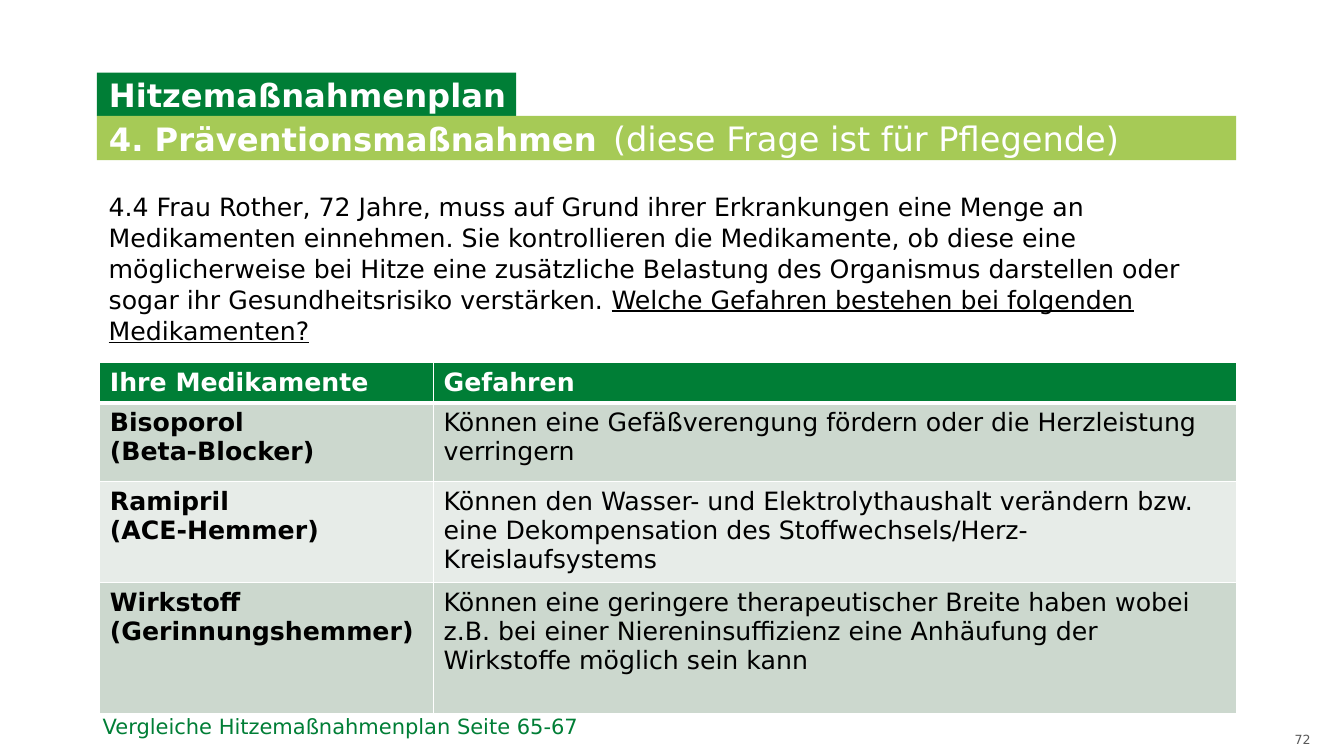
from lxml.etree import SubElement
from pptx import Presentation
from pptx.dml.color import RGBColor
from pptx.enum.text import MSO_ANCHOR, MSO_AUTO_SIZE, PP_ALIGN
from pptx.oxml.ns import qn
from pptx.util import Inches, Pt

GREEN = RGBColor(0x00, 0x7E, 0x36)
LIME = RGBColor(0xA6, 0xCA, 0x56)
BAND_DARK = RGBColor(0xCC, 0xD8, 0xCE)
BAND_LIGHT = RGBColor(0xE7, 0xEC, 0xE8)
WHITE = RGBColor(0xFF, 0xFF, 0xFF)
BLACK = RGBColor(0x00, 0x00, 0x00)
GREY = RGBColor(0x59, 0x59, 0x59)


class SlideBuilder:
    font = "DejaVu Sans"

    def __init__(self, slide):
        self.s = slide

    def run(self, p, text, size, color, bold=False, underline=False):
        r = p.add_run()
        r.text = text
        r.font.name = self.font
        r.font.size = Pt(size)
        r.font.bold = bold
        r.font.underline = underline
        r.font.color.rgb = color

    def place(self, sp, box):
        sp.left, sp.top, sp.width, sp.height = (Inches(v) for v in box)

    def bar(self, idx, box, fill, tab=None):
        sp = self.s.placeholders[idx]
        self.place(sp, box)
        sp.fill.solid()
        sp.fill.fore_color.rgb = fill
        tf = sp.text_frame
        tf.word_wrap = False
        tf.auto_size = MSO_AUTO_SIZE.NONE
        tf.vertical_anchor = MSO_ANCHOR.MIDDLE
        tf.margin_left, tf.margin_right = Inches(0.12), Inches(0.08)
        tf.margin_top = tf.margin_bottom = Inches(0.02)
        p = tf.paragraphs[0]
        p.alignment = PP_ALIGN.LEFT
        p.space_before = Pt(0)
        pPr = p._p.get_or_add_pPr()
        pPr.set("marL", "0")
        pPr.set("indent", "0")
        SubElement(pPr, qn("a:buNone"))
        if tab:
            tabs = SubElement(pPr, qn("a:tabLst"))
            SubElement(tabs, qn("a:tab"), pos=str(Inches(tab)), algn="l")
        return p

    def text(self, box, wrap=True, margins=True):
        tf = self.s.shapes.add_textbox(*(Inches(v) for v in box)).text_frame
        tf.word_wrap = wrap
        if not margins:
            tf.margin_left = tf.margin_right = 0
            tf.margin_top = tf.margin_bottom = 0
        return tf

    def cell(self, cell, lines, fill, color, bold, top, bottom):
        tcPr = cell._tc.get_or_add_tcPr()
        for side, width in (("L", 1), ("R", 1), ("T", top), ("B", bottom)):
            ln = SubElement(tcPr, qn(f"a:ln{side}"), w=str(Pt(width)))
            paint = SubElement(ln, qn("a:solidFill"))
            SubElement(paint, qn("a:srgbClr"), val=str(WHITE))
        cell.fill.solid()
        cell.fill.fore_color.rgb = fill
        tf = cell.text_frame
        for i, line in enumerate(lines):
            p = tf.add_paragraph() if i else tf.paragraphs[0]
            self.run(p, line, 18, color, bold)

    def table(self, box, widths, heights, rows):
        frame = self.s.shapes.add_table(len(rows), len(widths), *(Inches(v) for v in box))
        table = frame.table
        for col, width in zip(table.columns, widths):
            col.width = Inches(width)
        for row, height in zip(table.rows, heights):
            row.height = Inches(height)
        for i, row in enumerate(rows):
            fill = GREEN if i == 0 else BAND_DARK if i % 2 else BAND_LIGHT
            color = BLACK if i else WHITE
            for j, lines in enumerate(row):
                self.cell(table.cell(i, j), lines, fill, color, i == 0 or j == 0,
                          3 if i == 1 else 1, 3 if i == 0 else 1)


def main():
    prs = Presentation()
    prs.slide_width, prs.slide_height = Inches(13.33), Inches(7.5)
    b = SlideBuilder(prs.slides.add_slide(prs.slide_layouts[1]))

    p = b.bar(0, (0.96, 0.72, 4.16, 0.43), GREEN)
    b.run(p, "Hitzemaßnahmenplan", 23, WHITE, bold=True)
    p = b.bar(1, (0.96, 1.15, 11.3, 0.44), LIME, tab=5.96)
    b.run(p, "4. Präventionsmaßnahmen\t", 23, WHITE, bold=True)
    b.run(p, "(diese Frage ist für Pflegende)", 24, WHITE)

    p = b.text((0.98, 1.84, 11.1, 1.65)).paragraphs[0]
    p.line_spacing = 1.03
    b.run(p, "4.4 Frau Rother, 72 Jahre, muss auf Grund ihrer Erkrankungen eine Menge an "
             "Medikamenten einnehmen. Sie kontrollieren die Medikamente, ob diese eine "
             "möglicherweise bei Hitze eine zusätzliche Belastung des Organismus darstellen "
             "oder sogar ihr Gesundheitsrisiko verstärken. ", 18, BLACK)
    b.run(p, "Welche Gefahren bestehen bei folgenden Medikamenten?", 18, BLACK, underline=True)

    b.table((0.99, 3.6, 11.27, 3.47), (3.31, 7.96), (0.39, 0.78, 1, 1.3), [
        (["Ihre Medikamente"], ["Gefahren"]),
        (["Bisoporol", "(Beta-Blocker)"],
         ["Können eine Gefäßverengung fördern oder die Herzleistung verringern"]),
        (["Ramipril", "(ACE-Hemmer)"],
         ["Können den Wasser- und Elektrolythaushalt verändern bzw. eine Dekompensation "
          "des Stoffwechsels/Herz-Kreislaufsystems"]),
        (["Wirkstoff (Gerinnungshemmer)"],
         ["Können eine geringere therapeutischer Breite haben wobei z.B. bei einer "
          "Niereninsuffizienz eine Anhäufung der Wirkstoffe möglich sein kann"]),
    ])

    p = b.text((0.92, 7.03, 4.97, 0.35), wrap=False).paragraphs[0]
    b.run(p, "Vergleiche Hitzemaßnahmenplan Seite 65-67", 15, GREEN)

    tf = b.text((11.94, 7.21, 1.06, 0.2), margins=False)
    tf.vertical_anchor = MSO_ANCHOR.BOTTOM
    p = tf.paragraphs[0]
    p.alignment = PP_ALIGN.RIGHT
    b.run(p, "72", 9, GREY)

    prs.save("out.pptx")


if __name__ == "__main__":
    main()
